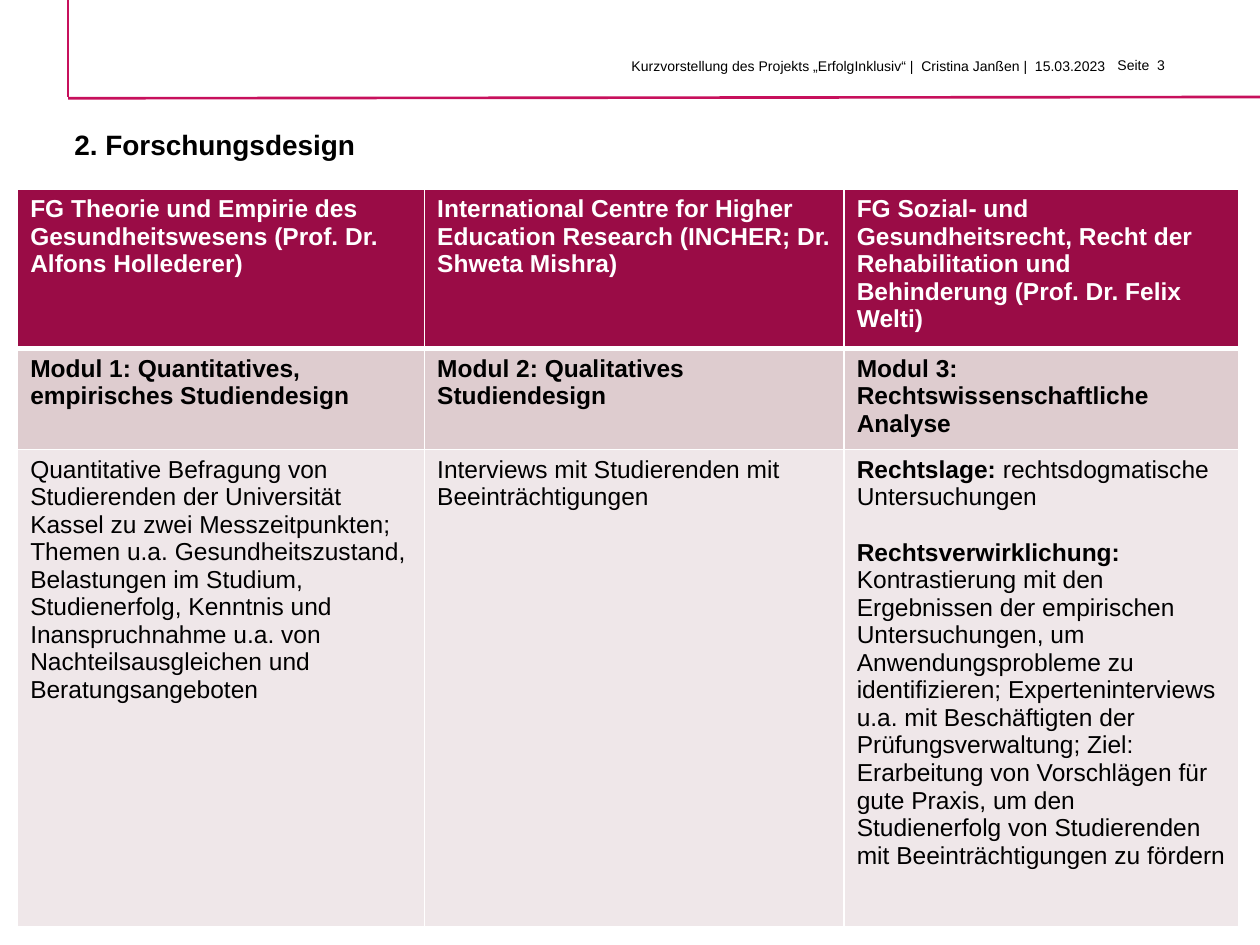
"""Build the research design slide with a title, a header line and a three-module table."""
import pptx
import pptx.dml.color
import pptx.enum.shapes
import pptx.enum.text
import pptx.oxml
import pptx.oxml.ns
import pptx.util
from pptx.util import Inches

COLORS = {
    "line": "C7105C", "header": "9A0C46", "module": "DECCCF",
    "body": "EFE7E9", "white": "FFFFFF", "black": "000000",
}
NAMESPACE = pptx.oxml.ns.nsdecls("a")


def rgb(name):
    return pptx.dml.color.RGBColor.from_string(COLORS[name])


def format_paragraph(paragraph, size, color="black", bold=None):
    paragraph.font.name = "Arial"
    paragraph.font.size = pptx.util.Pt(size)
    paragraph.font.color.rgb = rgb(color)
    paragraph.font.bold = bold


presentation = pptx.Presentation()
presentation.slide_width = Inches(10)
presentation.slide_height = Inches(7.5)
slide = presentation.slides.add_slide(presentation.slide_layouts[5])

for x1, y1, x2, y2 in [(0.54, 0, 0.54, 0.77), (0.54, 0.78, 10, 0.77)]:
    connector = slide.shapes.add_connector(
        pptx.enum.shapes.MSO_CONNECTOR.STRAIGHT,
        Inches(x1), Inches(y1), Inches(x2), Inches(y2))
    connector.line.color.rgb = rgb("line")
    connector.line.width = pptx.util.Pt(1.5)
    connector._element.spPr.append(pptx.oxml.parse_xml(f"<a:effectLst {NAMESPACE}/>"))

title = slide.shapes.title
title.left, title.top = Inches(0.59), Inches(1.04)
title.width, title.height = Inches(7.13), Inches(0.63)
title_frame = title.text_frame
title_frame.text = "2. Forschungsdesign"
title_frame.margin_left = title_frame.margin_right = 0
title_frame.margin_top = title_frame.margin_bottom = 0
title_frame.vertical_anchor = pptx.enum.text.MSO_ANCHOR.TOP
title_frame.paragraphs[0].alignment = pptx.enum.text.PP_ALIGN.LEFT
title_frame.paragraphs[0].line_spacing = 0.9
format_paragraph(title_frame.paragraphs[0], 16, bold=True)

header_boxes = [
    (1.31, 0.41, 7.57, 0.28, pptx.enum.text.PP_ALIGN.RIGHT,
     "Kurzvorstellung des Projekts „ErfolgInklusiv“ |  Cristina Janßen |  15.03.2023"),
    (8.77, 0.4, 0.75, 0.23, pptx.enum.text.PP_ALIGN.LEFT, "Seite  3"),
]
for left, top, width, height, alignment, text in header_boxes:
    box = slide.shapes.add_textbox(Inches(left), Inches(top), Inches(width), Inches(height))
    box.text_frame.word_wrap = True
    paragraph = box.text_frame.paragraphs[0]
    paragraph.text = text
    paragraph.alignment = alignment
    format_paragraph(paragraph, 8)

column_widths = [3.23, 3.33, 3.13]
rows = [
    (1.22, "header", "white", True, [
        "FG Theorie und Empirie des Gesundheitswesens (Prof. Dr. Alfons Hollederer)",
        "International Centre for Higher Education Research (INCHER; Dr. Shweta Mishra)",
        "FG Sozial- und Gesundheitsrecht, Recht der Rehabilitation und Behinderung "
        "(Prof. Dr. Felix Welti)",
    ]),
    (0.77, "module", "black", True, [
        "Modul 1: Quantitatives, empirisches Studiendesign",
        "Modul 2: Qualitatives Studiendesign",
        "Modul 3: Rechtswissenschaftliche Analyse",
    ]),
    (3.79, "body", "black", False, [
        "Quantitative Befragung von Studierenden der Universität Kassel zu zwei "
        "Messzeitpunkten; Themen u.a. Gesundheitszustand, Belastungen im Studium, "
        "Studienerfolg, Kenntnis und Inanspruchnahme u.a. von Nachteilsausgleichen und "
        "Beratungsangeboten",
        "Interviews mit Studierenden mit Beeinträchtigungen",
        "",
    ]),
]
table = slide.shapes.add_table(
    len(rows), len(column_widths), Inches(0.14), Inches(1.5),
    Inches(sum(column_widths)), Inches(sum(row[0] for row in rows))).table
for column, width in zip(table.columns, column_widths):
    column.width = Inches(width)

for row_index, (height, fill, color, bold, texts) in enumerate(rows):
    table.rows[row_index].height = Inches(height)
    for column_index, text in enumerate(texts):
        cell = table.cell(row_index, column_index)
        properties = cell._tc.get_or_add_tcPr()
        for side in "LRTB":
            heavy = (row_index, side) in [(0, "B"), (1, "T")]
            properties.append(pptx.oxml.parse_xml(
                f'<a:ln{side} {NAMESPACE} w="{pptx.util.Pt(3 if heavy else 1)}"><a:solidFill>'
                f'<a:srgbClr val="{COLORS["white"]}"/></a:solidFill></a:ln{side}>'))
        cell.fill.solid()
        cell.fill.fore_color.rgb = rgb(fill)
        cell.text = text
        format_paragraph(cell.text_frame.paragraphs[0], 14, color, bold)

legal_paragraphs = [
    [("Rechtslage: ", True), ("rechtsdogmatische Untersuchungen", False)],
    [("Rechtsverwirklichung:", True)],
    [("Kontrastierung mit den Ergebnissen der empirischen Untersuchungen, um "
      "Anwendungsprobleme zu identifizieren; Experteninterviews u.a. mit Beschäftigten der "
      "Prüfungsverwaltung; Ziel: Erarbeitung von Vorschlägen für gute Praxis, um den "
      "Studienerfolg von Studierenden mit Beeinträchtigungen zu fördern", False)],
]
legal_frame = table.cell(2, 2).text_frame
for index, runs in enumerate(legal_paragraphs):
    paragraph = legal_frame.add_paragraph() if index else legal_frame.paragraphs[0]
    format_paragraph(paragraph, 14)
    for text, bold in runs:
        run = paragraph.add_run()
        run.text = text
        run.font.bold = bold
legal_frame.paragraphs[1].space_before = pptx.util.Pt(16)

presentation.save("out.pptx")
